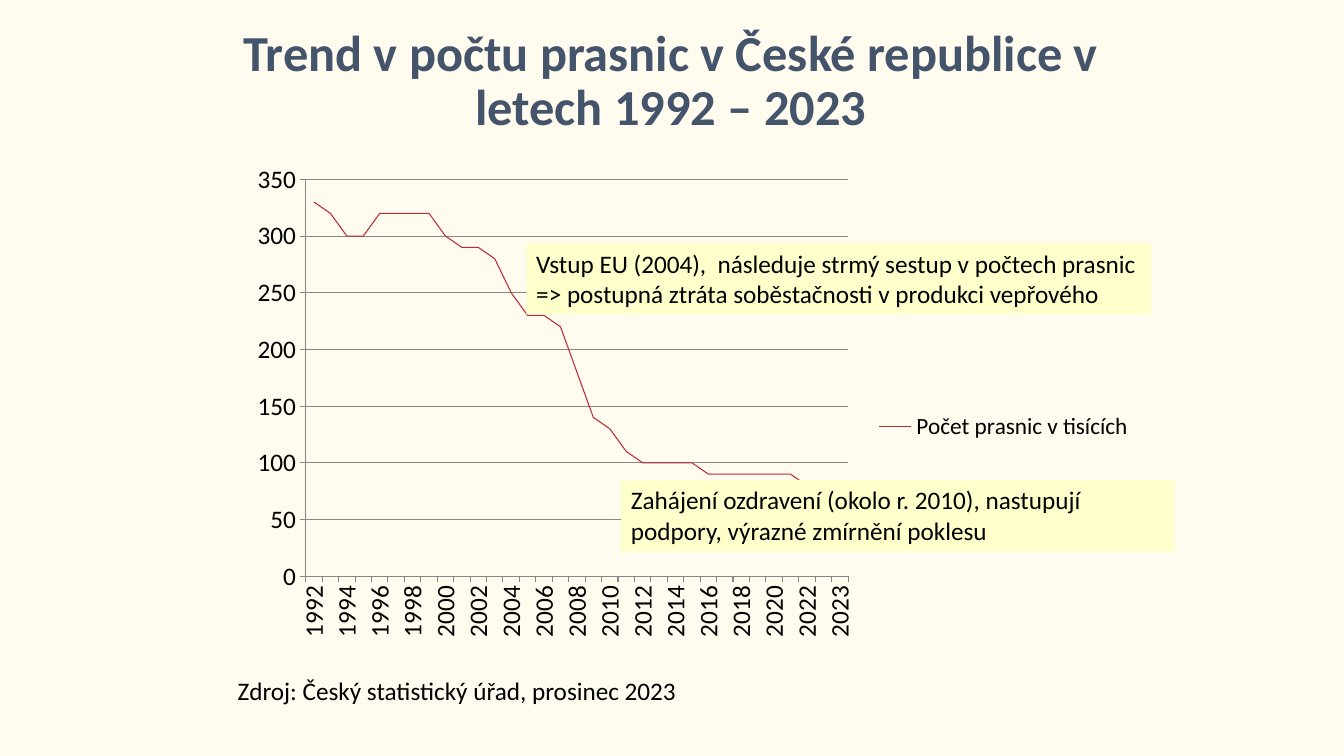
from lxml.etree import SubElement
from pptx import Presentation
from pptx.chart.data import CategoryChartData
from pptx.dml.color import RGBColor
from pptx.enum.chart import XL_CHART_TYPE, XL_LEGEND_POSITION, XL_TICK_MARK
from pptx.enum.shapes import MSO_SHAPE
from pptx.enum.text import MSO_ANCHOR, MSO_AUTO_SIZE, PP_ALIGN
from pptx.oxml.ns import qn
from pptx.util import Inches, Pt

COLORS = {
    "background": "FFFBEF",
    "title": "44546A",
    "text": "000000",
    "note": "FFFFCC",
    "sows": "BA2A32",
    "axis": "878787",
}
FONT = "Calibri"

YEARS = [*range(1992, 2024), 2023]
SOWS = [330, 320, 300, 300, 320, 320, 320, 320, 300, 290, 290,
        280, 250, 230, 230, 220, 180, 140, 130, 110, 100, 100,
        100, 100, 90, 90, 90, 90, 90, 90, 80, 80, 80]


def color(name):
    return RGBColor.from_string(COLORS[name])


def format_font(font, size=18, bold=False, color_name="text"):
    font.name = FONT
    font.size = Pt(size)
    font.bold = bold
    font.color.rgb = color(color_name)


def write_text(shape, text, align=PP_ALIGN.LEFT, anchor=MSO_ANCHOR.TOP,
               line_spacing=None, grow=True, **font_format):
    frame = shape.text_frame
    frame.word_wrap = True
    frame.vertical_anchor = anchor
    frame.auto_size = MSO_AUTO_SIZE.SHAPE_TO_FIT_TEXT if grow else MSO_AUTO_SIZE.NONE
    paragraph = frame.paragraphs[0]
    paragraph.alignment = align
    paragraph.line_spacing = line_spacing
    run = paragraph.add_run()
    run.text = text
    format_font(run.font, **font_format)


def place_plot(chart, **fractions):
    """Fix the inner plot area as fractions of the chart frame."""
    plot_area = chart._chartSpace.chart.plotArea
    for old_layout in plot_area.findall(qn("c:layout")):
        plot_area.remove(old_layout)
    layout = SubElement(plot_area, qn("c:layout"))
    plot_area.insert(0, layout)
    manual = SubElement(layout, qn("c:manualLayout"))
    settings = {"layoutTarget": "inner", "xMode": "edge", "yMode": "edge", **fractions}
    for tag, value in settings.items():
        SubElement(manual, qn(f"c:{tag}")).set("val", str(value))


def label_every(axis, step):
    """Label every step-th category and keep a tick mark for each one."""
    no_multi_level = axis._element.find(qn("c:noMultiLvlLbl"))
    for tag, value in (("tickLblSkip", step), ("tickMarkSkip", 1)):
        element = SubElement(axis._element, qn(f"c:{tag}"))
        element.set("val", str(value))
        if no_multi_level is not None:
            no_multi_level.addprevious(element)


class SlideBuilder:
    def __init__(self, presentation):
        self.slide = presentation.slides.add_slide(presentation.slide_layouts[6])
        fill = self.slide.background.fill
        fill.solid()
        fill.fore_color.rgb = color("background")

    def text(self, box, text, **text_format):
        shape = self.slide.shapes.add_textbox(*map(Inches, box))
        write_text(shape, text, **text_format)

    def note(self, box, text):
        shape = self.slide.shapes.add_shape(MSO_SHAPE.RECTANGLE, *map(Inches, box))
        shape.shadow.inherit = False
        shape.fill.solid()
        shape.fill.fore_color.rgb = color("note")
        shape.line.fill.background()
        write_text(shape, text)

    def line_chart(self, box, name, categories, values):
        data = CategoryChartData(number_format="#,##0")
        data.categories = [str(category) for category in categories]
        data.add_series(name, values)
        chart = self.slide.shapes.add_chart(
            XL_CHART_TYPE.LINE, *map(Inches, box), data).chart
        chart.has_title = False
        format_font(chart.font)
        place_plot(chart, x=0.078, y=0.056, w=0.597, h=0.712)

        # Series
        plot = chart.plots[0]
        plot.vary_by_categories = False
        series = plot.series[0]
        series.smooth = False
        series.format.line.color.rgb = color("sows")
        series.format.line.width = Pt(0.75)

        # Axes
        for axis in (chart.category_axis, chart.value_axis):
            axis.major_tick_mark = XL_TICK_MARK.OUTSIDE
            axis.minor_tick_mark = XL_TICK_MARK.NONE
            axis.format.line.color.rgb = color("axis")
            format_font(axis.tick_labels.font)
        label_every(chart.category_axis, 2)
        text_body = chart.category_axis._element.find(qn("c:txPr"))
        text_body.find(qn("a:bodyPr")).set("rot", "-5400000")
        value_axis = chart.value_axis
        value_axis.minimum_scale, value_axis.maximum_scale = 0, 350
        value_axis.major_unit = 50
        value_axis.tick_labels.number_format = "#,##0"
        value_axis.tick_labels.number_format_is_linked = False
        value_axis.major_gridlines.format.line.color.rgb = color("axis")

        # Legend
        chart.has_legend = True
        chart.legend.position = XL_LEGEND_POSITION.RIGHT
        chart.legend.include_in_layout = False
        format_font(chart.legend.font, size=16.6)


def main():
    presentation = Presentation()
    presentation.slide_width = Inches(13.33)
    presentation.slide_height = Inches(7.5)
    builder = SlideBuilder(presentation)

    # Title
    builder.text((1.94, 0.42, 9.43, 0.79),
                 "Trend v počtu prasnic v České republice v letech 1992 – 2023",
                 align=PP_ALIGN.CENTER, anchor=MSO_ANCHOR.MIDDLE, line_spacing=0.9,
                 grow=False, size=36, bold=True, color_name="title")

    # Chart and its source
    builder.line_chart((2.33, 1.47, 9.01, 5.53), "Počet prasnic v tisících", YEARS, SOWS)
    builder.text((2.26, 6.65, 6.2, 0.4), "Zdroj: Český statistický úřad, prosinec 2023")

    # Notes over the chart
    builder.note((5.22, 2.41, 6.2, 0.71),
                 "Vstup EU (2004),  následuje strmý sestup v počtech prasnic "
                 "=> postupná ztráta soběstačnosti v produkci vepřového")
    builder.note((6.16, 4.76, 5.49, 0.71),
                 "Zahájení ozdravení (okolo r. 2010), nastupují podpory, "
                 "výrazné zmírnění poklesu")

    presentation.save("out.pptx")


if __name__ == "__main__":
    main()
